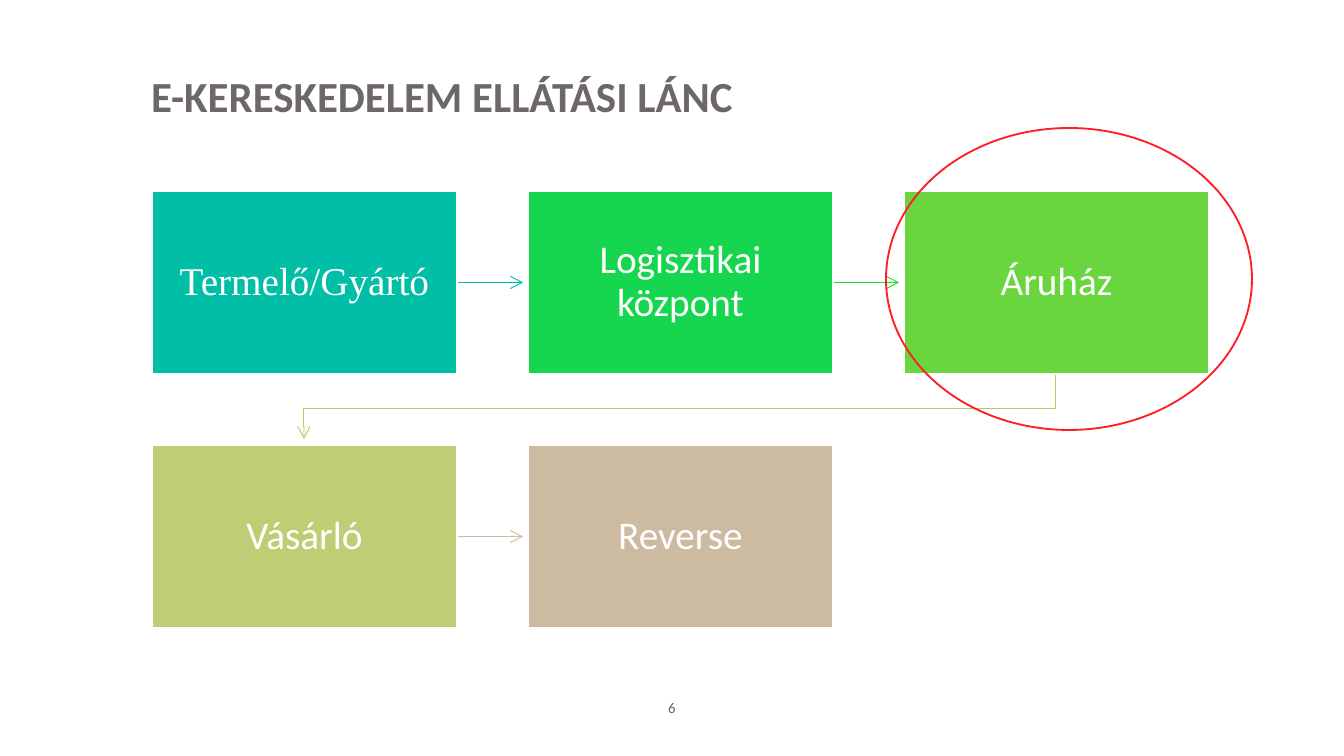
import pptx
import pptx.util
import pptx.dml.color
import pptx.enum.shapes
import pptx.enum.text
import pptx.oxml.ns
import lxml.etree

PX = 914400 / 134.4
COLORS = {
    "text": "6E6767", "white": "FFFFFF", "ring": "FF1E27",
    "producer": "00BFA6", "logistics": "15D64E", "store": "69D640",
    "customer": "C0CD74", "reverse": "CCBAA1",
    "logistics_arrow": "1DDC32", "store_arrow": "AACF64",
}
RGB = {k: pptx.dml.color.RGBColor.from_string(v) for k, v in COLORS.items()}
SHAPE = pptx.enum.shapes.MSO_SHAPE
ALIGN = pptx.enum.text.PP_ALIGN
ANCHOR = pptx.enum.text.MSO_ANCHOR


def write(sp, text, size, color="text", font="Calibri", bold=False,
          align=ALIGN.CENTER, anchor=ANCHOR.TOP, inset=0, wrap=True, spacing=0.9):
    tf = sp.text_frame
    tf.word_wrap = wrap
    tf.auto_size = pptx.enum.text.MSO_AUTO_SIZE.NONE
    tf.vertical_anchor = anchor
    tf.margin_left = tf.margin_right = tf.margin_top = tf.margin_bottom = round(inset * PX)
    p = tf.paragraphs[0]
    p.alignment = align
    p.line_spacing = spacing
    r = p.add_run()
    r.text = text
    r.font.size = pptx.util.Pt(size)
    r.font.name = font
    r.font.bold = bold
    r.font.color.rgb = RGB[color]


def style_arrow(sp, color):
    sp.line.color.rgb = RGB[color]
    sp.line.width = pptx.util.Pt(0.5)
    ln = sp.line._get_or_add_ln()
    lxml.etree.SubElement(ln, pptx.oxml.ns.qn("a:tailEnd"), type="arrow")
    spPr = sp._element.spPr
    if spPr.find(pptx.oxml.ns.qn("a:effectLst")) is None:
        lxml.etree.SubElement(spPr, pptx.oxml.ns.qn("a:effectLst"))


prs = pptx.Presentation()
prs.slide_width = round(1344 * PX)
prs.slide_height = round(756 * PX)
s = prs.slides.add_slide(prs.slide_layouts[5])

title = s.shapes.title
title.left, title.top, title.width, title.height = [round(v * PX) for v in (151, 75, 1059, 62)]
write(title, "E-KERESKEDELEM ELLÁTÁSI LÁNC", 23, bold=True, align=ALIGN.LEFT)

LEFT, TOP, W, H = 152, 191, 305, 183
STEP_X, STEP_Y = 376, 254
ARROW = 66

steps = [
    ("Termelő/Gyártó", "producer", "Times New Roman", 0, 0, "producer"),
    ("Logisztikai központ", "logistics", "Calibri", 1, 0, "logistics_arrow"),
    ("Áruház", "store", "Calibri", 2, 0, None),
    ("Vásárló", "customer", "Calibri", 0, 1, "reverse"),
    ("Reverse", "reverse", "Calibri", 1, 1, None),
]

start_x, start_y = LEFT + 2 * STEP_X + W // 2, TOP + H
end_x, end_y = LEFT + W // 2, TOP + STEP_Y - 6
bend_y = start_y + (STEP_Y - H) // 2
fb = s.shapes.build_freeform(start_x, start_y, scale=PX)
fb.add_line_segments([(start_x, bend_y), (end_x, bend_y), (end_x, end_y)], close=False)
turn = fb.convert_to_shape()
turn.fill.background()
turn.shadow.inherit = False
style_arrow(turn, "store_arrow")

for text, fill, font, col, row, arrow_color in steps:
    x, y = LEFT + col * STEP_X, TOP + row * STEP_Y
    if arrow_color:
        mid = round((y + H / 2) * PX)
        arrow = s.shapes.add_connector(
            pptx.enum.shapes.MSO_CONNECTOR.STRAIGHT,
            round((x + W) * PX), mid, round((x + W + ARROW) * PX), mid)
        style_arrow(arrow, arrow_color)
    box = s.shapes.add_shape(SHAPE.RECTANGLE, *[round(v * PX) for v in (x, y, W, H)])
    box.shadow.inherit = False
    box.fill.solid()
    box.fill.fore_color.rgb = RGB[fill]
    box.line.color.rgb = RGB["white"]
    box.line.width = pptx.util.Pt(1)
    write(box, text, 21, color="white", font=font, anchor=ANCHOR.MIDDLE, inset=21)
    if arrow_color:
        arrow.begin_connect(box, 3)

ring = s.shapes.add_shape(SHAPE.OVAL, *[round(v * PX) for v in (886, 128, 366, 302)])
ring.shadow.inherit = False
ring.fill.background()
ring.line.color.rgb = RGB["ring"]
ring.line.width = pptx.util.Pt(1)

number = s.shapes.add_textbox(*[round(v * PX) for v in (661, 699, 22, 18)])
write(number, "6", 8, wrap=False, spacing=1.0)

prs.save("out.pptx")
